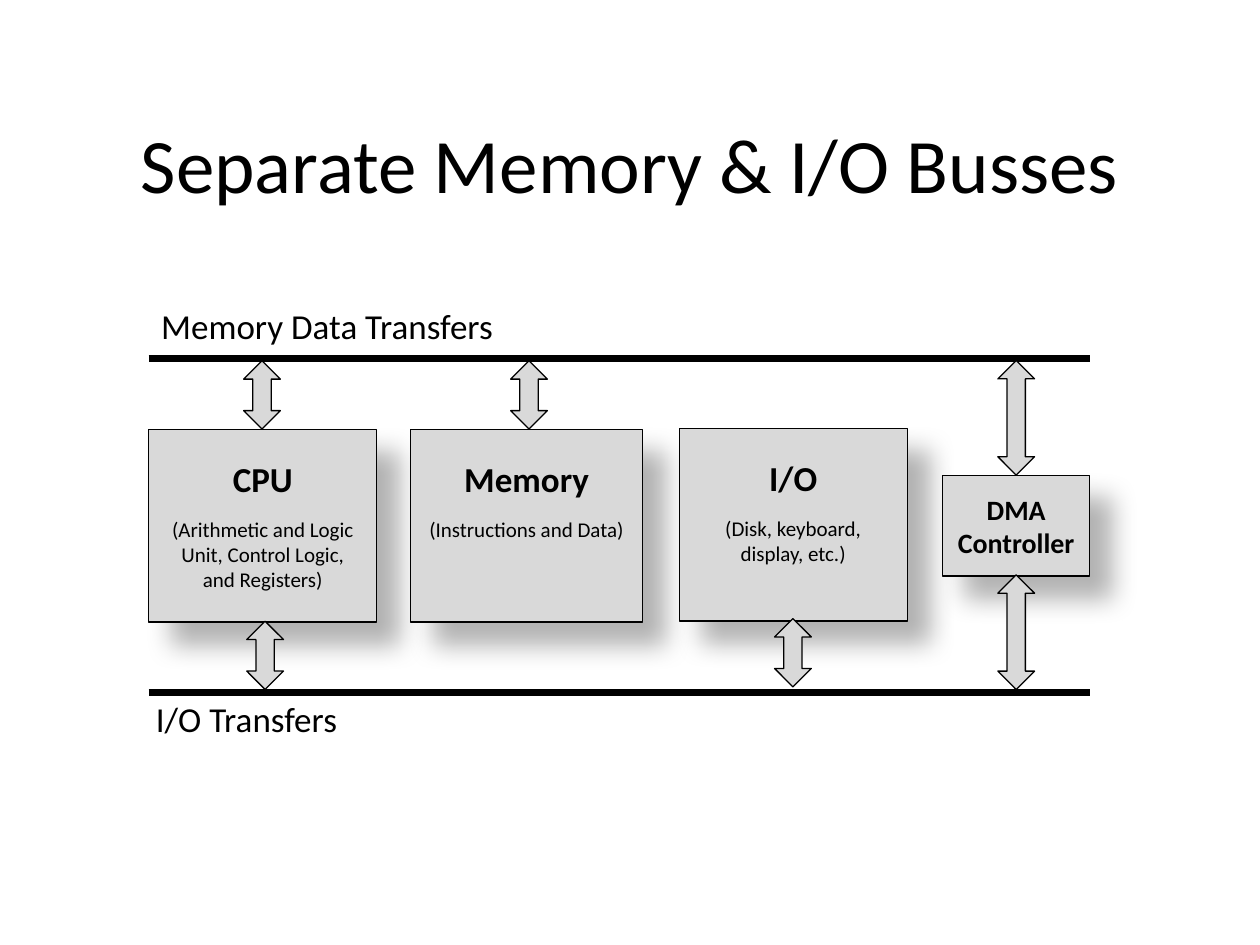
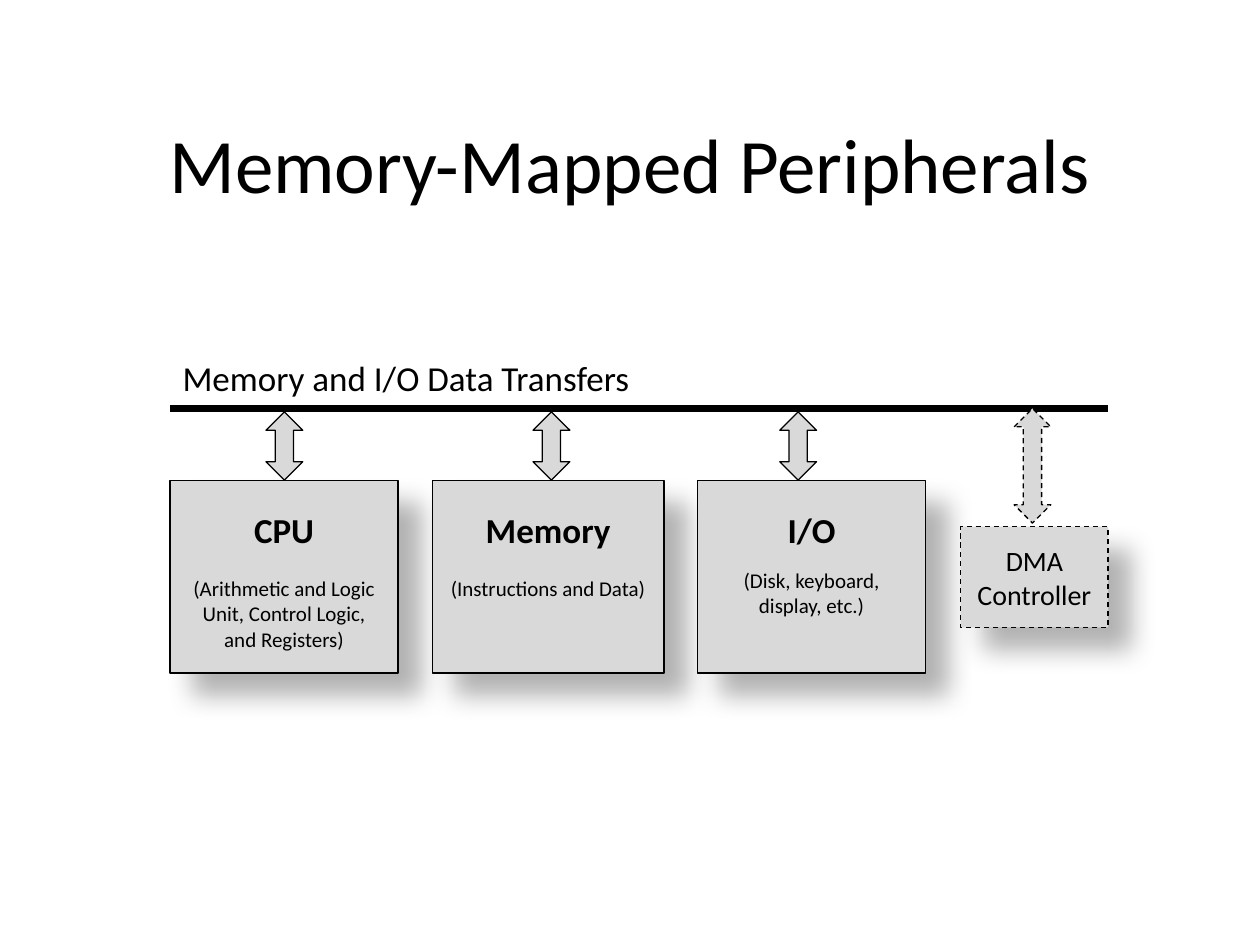
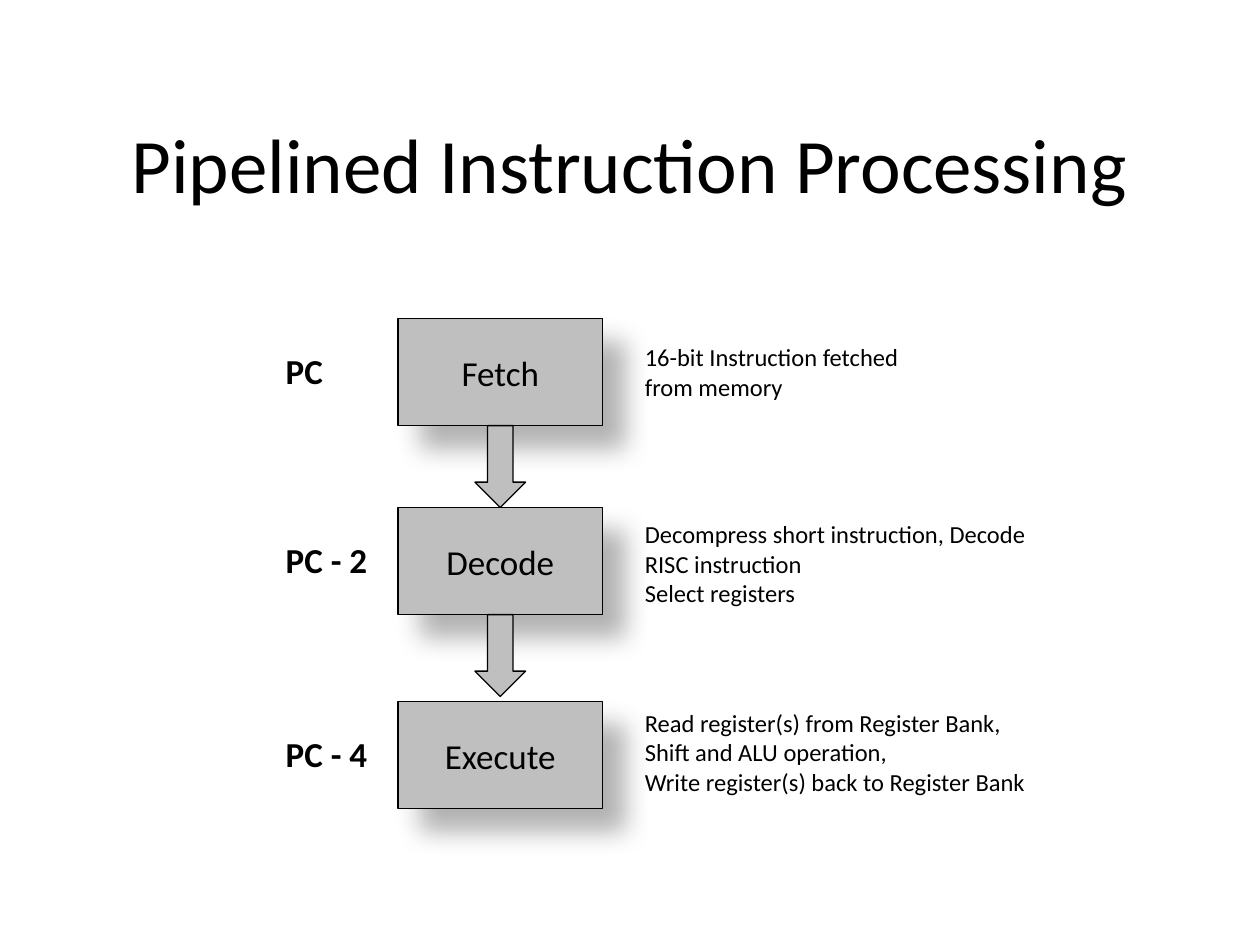
from copy import deepcopy
from lxml import etree
from pptx import Presentation
from pptx.dml.color import RGBColor
from pptx.enum.dml import MSO_LINE
from pptx.enum.shapes import MSO_CONNECTOR, MSO_SHAPE
from pptx.enum.text import MSO_ANCHOR, PP_ALIGN
from pptx.oxml import parse_xml
from pptx.oxml.ns import nsdecls, qn
from pptx.util import Pt

# Shared look
FONT = "Calibri"
BLACK = "000000"
LIGHT_GREY = "D9D9D9"
MID_GREY = "BFBFBF"
ARROW_WIDTH = 21
SHADOW = (
    f'<a:effectLst {nsdecls("a")}>'
    '<a:outerShdw blurRad="190500" dist="228600" dir="2700000" algn="tl" rotWithShape="0">'
    f'<a:srgbClr val="{BLACK}"><a:alpha val="30000"/></a:srgbClr>'
    '</a:outerShdw></a:effectLst>'
)


def write(shape, text, size, bold=False, align=PP_ALIGN.LEFT, anchor=MSO_ANCHOR.TOP):
    frame = shape.text_frame
    frame.text = text
    frame.word_wrap = True
    frame.vertical_anchor = anchor
    for para in frame.paragraphs:
        para.alignment = align
        for span in para.runs:
            span.font.name = FONT
            span.font.size = Pt(size)
            span.font.bold = bold
            span.font.color.rgb = RGBColor.from_string(BLACK)
        # Line breaks take the size of the text around them
        for line_break in para._p.findall(qn("a:br")):
            line_break.append(deepcopy(para.runs[0].font._element))


def add_part(page, kind, left, top, width, height, fill, shadow=False, dashed=False):
    part = page.shapes.add_shape(kind, Pt(left), Pt(top), Pt(width), Pt(height))
    part.fill.solid()
    part.fill.fore_color.rgb = RGBColor.from_string(fill)
    part.line.color.rgb = RGBColor.from_string(BLACK)
    part.line.width = Pt(0.75)
    if dashed:
        part.line.dash_style = MSO_LINE.DASH
    if shadow:
        part._element.spPr.append(parse_xml(SHADOW))
    else:
        part.shadow.inherit = False
    return part


deck = Presentation()
deck.slide_width, deck.slide_height = Pt(720), Pt(540)

# Slides and their titles
pages = []
for title in ("Separate Memory & I/O Busses", "Memory-Mapped Peripherals",
              "Pipelined Instruction Processing"):
    page = deck.slides.add_slide(deck.slide_layouts[6])
    box = page.shapes.add_textbox(Pt(54), Pt(48), Pt(612), Pt(90))
    write(box, title, 44, align=PP_ALIGN.CENTER, anchor=MSO_ANCHOR.MIDDLE)
    pages.append(page)

# Bus diagrams
CPU = "CPU\n(Arithmetic and Logic\vUnit, Control Logic,\vand Registers)"
MEMORY = "Memory\n(Instructions and Data)"
IO = "I/O\n(Disk, keyboard,\vdisplay, etc.)"
diagrams = [
    {
        "buses": [(85, 204.6, 538), (85, 395.6, 538)],
        "labels": [(85, 170.6, "Memory Data Transfers"), (82, 395.3, "I/O Transfers")],
        # left, top, width, gap below the heading, text
        "units": [(85, 245.5, 130.3, 9.8, CPU), (234.7, 245.5, 132.5, 9.8, MEMORY),
                  (388.1, 244.8, 130.3, 9.8, IO)],
        "controller": (538.6, 271.6),
        # left, top, height
        "arrows": [(139.2, 206.2, 39), (141, 355, 39), (291.8, 206.2, 39),
                   (442.6, 353.5, 39)],
        "controller_arrows": [(570.2, 206, 65.5), (570.2, 328.5, 65.5)],
        "optional": False,
    },
    {
        "buses": [(97.2, 233.6, 536)],
        "labels": [(97.2, 200, "Memory and I/O Data Transfers")],
        "units": [(97.2, 274.5, 130.3, 14.65, CPU), (247, 274.5, 132.5, 14.65, MEMORY),
                  (398.6, 274.5, 130.3, 9.8, IO)],
        "controller": (549, 301),
        "arrows": [(left, 235.4, 39) for left in (152, 304.6, 445.6)],
        "controller_arrows": [(579.5, 233.4, 65.5)],
        "optional": True,
    },
]
for page, diagram in zip(pages, diagrams):
    optional = diagram["optional"]

    # Buses and their labels
    for left, top, length in diagram["buses"]:
        bus = page.shapes.add_connector(MSO_CONNECTOR.STRAIGHT, Pt(left), Pt(top),
                                        Pt(left + length), Pt(top))
        bus.line.color.rgb = RGBColor.from_string(BLACK)
        bus.line.width = Pt(4)
        etree.SubElement(bus._element.spPr, qn("a:effectLst"))
    for left, top, text in diagram["labels"]:
        write(page.shapes.add_textbox(Pt(left), Pt(top), Pt(290), Pt(31.5)), text, 20)

    # Units with a heading and a description
    for left, top, width, gap, text in diagram["units"]:
        unit = add_part(page, MSO_SHAPE.RECTANGLE, left, top, width, 110, LIGHT_GREY,
                        shadow=True)
        write(unit, text, 12, align=PP_ALIGN.CENTER)
        unit.text_frame.word_wrap = False
        unit.text_frame.margin_top = Pt(15.8)
        heading, description = unit.text_frame.paragraphs
        heading.runs[0].font.size = Pt(20)
        heading.runs[0].font.bold = True
        description.space_before = Pt(gap)

    # DMA controller
    left, top = diagram["controller"]
    controller = add_part(page, MSO_SHAPE.RECTANGLE, left, top, 84.2, 57.6, LIGHT_GREY,
                          shadow=True, dashed=optional)
    write(controller, "DMA Controller", 16, not optional, PP_ALIGN.CENTER,
          MSO_ANCHOR.MIDDLE)

    # Arrows between units and buses
    for left, top, height in diagram["arrows"]:
        add_part(page, MSO_SHAPE.UP_DOWN_ARROW, left, top, ARROW_WIDTH, height, LIGHT_GREY)
    for left, top, height in diagram["controller_arrows"]:
        add_part(page, MSO_SHAPE.UP_DOWN_ARROW, left, top, ARROW_WIDTH, height, LIGHT_GREY,
                 dashed=optional)

# Pipeline: top, stage, counter, offset and height of the description, description
page = pages[2]
stages = [
    (182.2, "Fetch", "PC", 10, 41, "16-bit Instruction fetched\vfrom memory"),
    (290.2, "Decode", "PC - 2", 3, 58,
     "Decompress short instruction, Decode RISC instruction\vSelect registers"),
    (401, "Execute", "PC - 4", 0, 58,
     "Read register(s) from Register Bank,\nShift and ALU operation,\n"
     "Write register(s) back to Register Bank"),
]
for top, name, counter, offset, height, description in stages:
    stage = add_part(page, MSO_SHAPE.RECTANGLE, 227.5, top, 116.8, 61, MID_GREY, shadow=True)
    write(stage, name, 20, align=PP_ALIGN.CENTER, anchor=MSO_ANCHOR.MIDDLE)
    box = page.shapes.add_textbox(Pt(156.2), Pt(top + 14.2), Pt(64), Pt(31.5))
    write(box, counter, 20, bold=True)
    box = page.shapes.add_textbox(Pt(361.4), Pt(top + offset), Pt(233.3), Pt(height))
    write(box, description, 14)
for top, *rest in stages[:-1]:
    add_part(page, MSO_SHAPE.DOWN_ARROW, 271.4, top + 61, 29, 46.8, MID_GREY)

deck.save("out.pptx")
